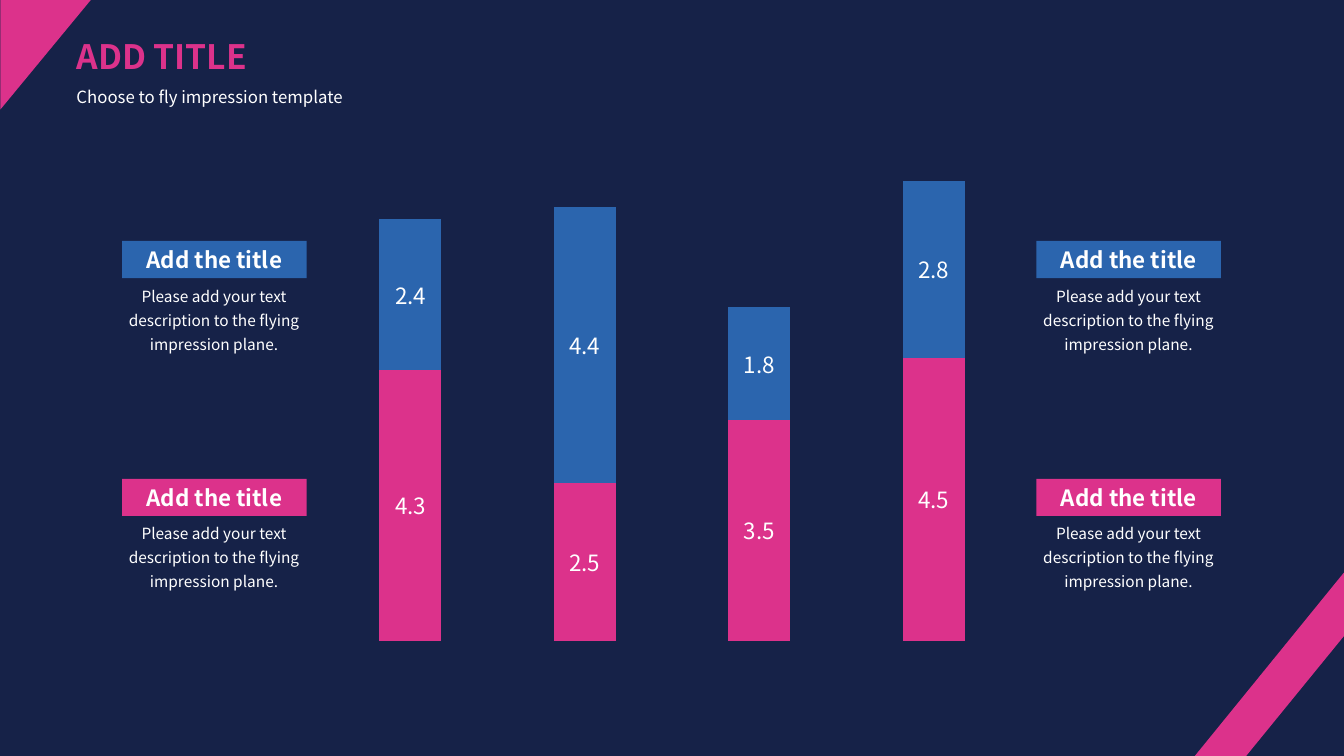
from dataclasses import dataclass

from pptx import Presentation
from pptx.chart.data import CategoryChartData
from pptx.dml.color import RGBColor
from pptx.enum.chart import XL_CHART_TYPE, XL_LABEL_POSITION
from pptx.enum.shapes import MSO_SHAPE
from pptx.enum.text import MSO_ANCHOR, PP_ALIGN
from pptx.util import Inches, Pt

LEFT, CENTER = PP_ALIGN.LEFT, PP_ALIGN.CENTER
TOP, MIDDLE = MSO_ANCHOR.TOP, MSO_ANCHOR.MIDDLE
STACKED = XL_CHART_TYPE.COLUMN_STACKED
LABEL_CENTER = XL_LABEL_POSITION.CENTER
RECTANGLE, TRIANGLE = MSO_SHAPE.RECTANGLE, MSO_SHAPE.ISOSCELES_TRIANGLE
WIDTH, HEIGHT = Inches(13.33), Inches(7.5)
TITLE_ONLY = 5


@dataclass(frozen=True)
class Theme:
    """Colours, fonts and type sizes of the slide."""
    navy: RGBColor = RGBColor(0x16, 0x22, 0x48)
    pink: RGBColor = RGBColor(0xDC, 0x32, 0x8B)
    blue: RGBColor = RGBColor(0x2B, 0x65, 0xAE)
    white: RGBColor = RGBColor(0xFF, 0xFF, 0xFF)
    black: RGBColor = RGBColor(0, 0, 0)
    font: str = "Noto Sans CJK SC"
    chart_font: str = "Calibri"
    title: int = 24
    heading: int = 16
    subtitle: int = 12
    body: int = 11
    chart: int = 10


THEME = Theme()
CALLOUT_COLUMNS = (9.08, 77.12)
CALLOUT_ROWS = ((63.33, THEME.pink), (31.87, THEME.blue))
SERIES = (
    ("Series 1", (4.3, 2.5, 3.5, 4.5), THEME.pink),
    ("Series 2", (2.4, 4.4, 1.8, 2.8), THEME.blue),
)


def across(percent):
    """Turn a percentage of the slide width into a length."""
    return round(WIDTH * percent / 100)


def down(percent):
    """Turn a percentage of the slide height into a length."""
    return round(HEIGHT * percent / 100)


def area(left, top, width, height):
    """Turn percentages of the slide into a position and a size."""
    return across(left), down(top), across(width), down(height)


def style_font(font, size, color, name=THEME.font, bold=False):
    """Set the typeface, size, weight and colour of a font."""
    font.name, font.size, font.bold = name, Pt(size), bold
    font.color.rgb = color


def write(box, text, size, color, align=LEFT, anchor=TOP, bold=False,
          spacing=1.0, wrap=True):
    """Put one formatted paragraph into a shape."""
    frame = box.text_frame
    frame.text = text
    frame.word_wrap, frame.vertical_anchor = wrap, anchor
    para = frame.paragraphs[0]
    para.alignment, para.line_spacing = align, spacing
    for span in para.runs:
        style_font(span.font, size, color, bold=bold)


def paint(shape, color):
    """Give a shape a flat fill without outline or shadow."""
    shape.fill.solid()
    shape.fill.fore_color.rgb = color
    shape.line.fill.background()
    shape.shadow.inherit = False


def add_header(page):
    """Fill the title and add the subtitle under it."""
    title = page.shapes.title
    title.left, title.top, title.width, title.height = area(4.95, 4.13, 14.85, 6.67)
    write(title, "ADD TITLE", THEME.title, THEME.pink, bold=True, wrap=False)
    subtitle = page.shapes.add_textbox(*area(4.95, 10, 26.26, 4.8))
    write(subtitle, "Choose to fly impression template", THEME.subtitle,
          THEME.white, spacing=1.3)


def add_corner(page):
    """Add the triangle in the top left corner."""
    corner = page.shapes.add_shape(TRIANGLE, *area(-0.68, 1.2, 8.18, 12))
    corner.adjustments[0] = 0
    corner.rotation = 90
    paint(corner, THEME.pink)


def add_band(page):
    """Add the slanted band in the bottom right corner."""
    start, *rest = [(across(x), down(y)) for x, y in
                    ((100, 75.73), (100, 84.13), (92.72, 100), (88.9, 100))]
    builder = page.shapes.build_freeform(*start)
    builder.add_line_segments(rest, close=True)
    paint(builder.convert_to_shape(), THEME.pink)


def add_chart(page):
    """Add the stacked columns with centred values."""
    data = CategoryChartData()
    data.categories = ["1", "2", "3", "4"]
    for name, values, _ in SERIES:
        data.add_series(name, values)
    chart = page.shapes.add_chart(STACKED, *area(22.96, 16.8, 54.09, 69.33), data).chart
    chart.has_legend = chart.has_title = False
    style_font(chart.font, THEME.chart, THEME.black, THEME.chart_font)
    chart.value_axis.minimum_scale, chart.value_axis.maximum_scale = 0, 8
    chart.value_axis.has_major_gridlines = False
    chart.value_axis.visible = chart.category_axis.visible = False
    plot = chart.plots[0]
    plot.gap_width, plot.overlap, plot.vary_by_categories = 180, 100, False
    for series, (_, _, color) in zip(plot.series, SERIES):
        series.format.fill.solid()
        series.format.fill.fore_color.rgb = color
        labels = series.data_labels
        labels.show_value, labels.position = True, LABEL_CENTER
        style_font(labels.font, THEME.heading, THEME.white)


def add_callout(page, left, top, color):
    """Add a coloured heading grouped with its description."""
    group = page.shapes.add_group_shape()
    heading = group.shapes.add_shape(RECTANGLE, *area(left, top, 13.73, 4.93))
    paint(heading, color)
    write(heading, "Add the title", THEME.heading, THEME.white, CENTER, MIDDLE, bold=True)
    body = group.shapes.add_textbox(*area(left - 0.5, top + 4.67, 14.7, 10.8))
    write(body, "Please add your text description to the flying impression plane.",
          THEME.body, THEME.white, CENTER, spacing=1.3)


def main():
    """Build the slide and save the deck."""
    deck = Presentation()
    deck.slide_width, deck.slide_height = WIDTH, HEIGHT
    page = deck.slides.add_slide(deck.slide_layouts[TITLE_ONLY])
    page.background.fill.solid()
    page.background.fill.fore_color.rgb = THEME.navy
    add_header(page)
    add_corner(page)
    add_chart(page)
    for top, color in CALLOUT_ROWS:
        for left in CALLOUT_COLUMNS:
            add_callout(page, left, top, color)
    add_band(page)
    deck.save("out.pptx")


if __name__ == "__main__":
    main()
